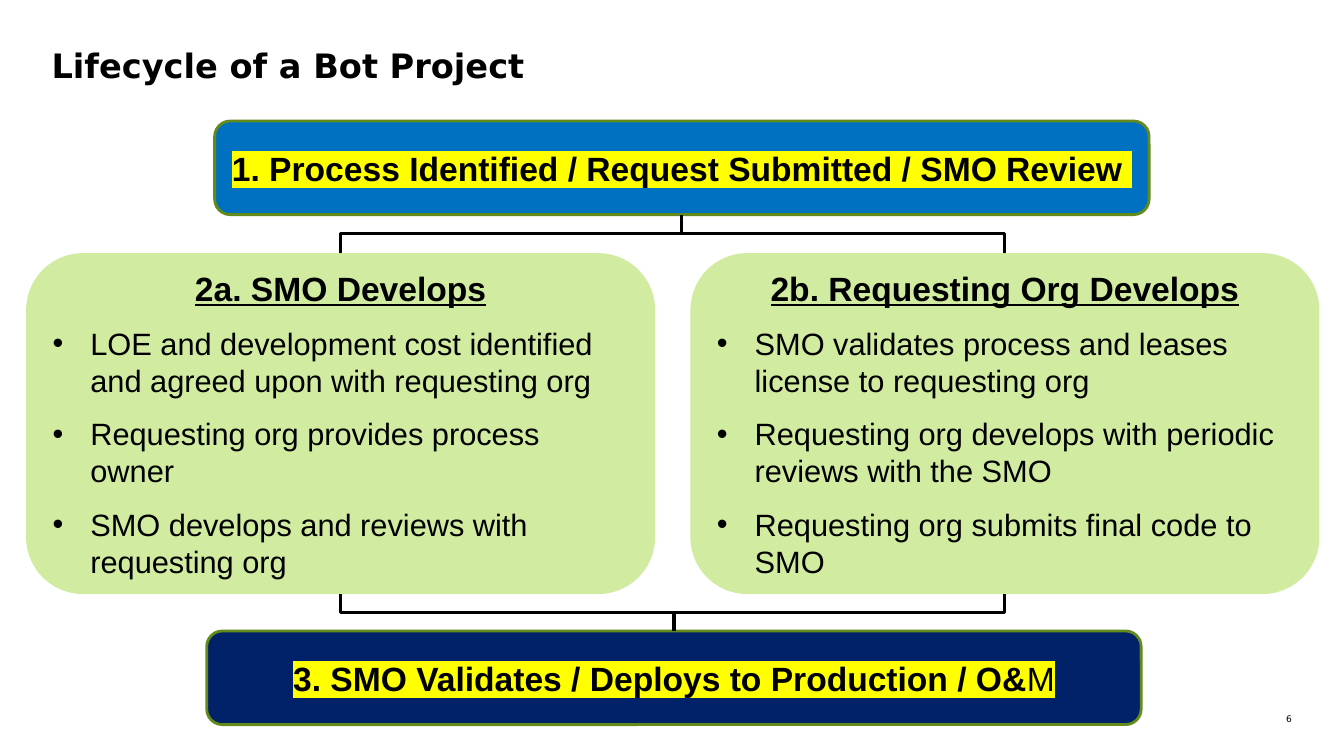
from lxml.etree import SubElement
from pptx import Presentation
from pptx.dml.color import RGBColor
from pptx.enum.shapes import MSO_CONNECTOR as Link, MSO_SHAPE as Shape
from pptx.enum.text import MSO_ANCHOR as Anchor, MSO_AUTO_SIZE as Fit, PP_ALIGN as Align
from pptx.oxml.ns import qn
from pptx.util import Cm, Pt

BLACK = RGBColor(0x00, 0x00, 0x00)
BLUE = RGBColor(0x00, 0x70, 0xC0)
NAVY = RGBColor(0x01, 0x21, 0x69)
GREEN = RGBColor(0x63, 0x8B, 0x1B)
LIME = RGBColor(0xD1, 0xEC, 0xA0)
YELLOW = RGBColor(0xFF, 0xFF, 0x00)
SANS, HEAD = "Arial", "DejaVu Sans"

CARDS = [
    (0.66, "2a. SMO Develops", [
        "LOE and development cost identified and agreed upon with requesting org",
        "Requesting org provides process owner",
        "SMO develops and reviews with requesting org"]),
    (17.4, "2b. Requesting Org Develops", [
        "SMO validates process and leases license to requesting org",
        "Requesting org develops with periodic reviews with the SMO",
        "Requesting org submits final code to SMO"]),
]


def style(run, size, face=SANS, bold=False, under=False):
    font = run.font
    font.size, font.name, font.bold, font.underline = Pt(size), face, bold, under
    font.color.rgb = BLACK


def mark(run):
    """Highlight a run in yellow."""
    props = run.font._element
    light = SubElement(props, qn("a:highlight"))
    SubElement(light, qn("a:srgbClr"), val=str(YELLOW))
    props.find(qn("a:solidFill")).addnext(light)


def add_box(slide, left, top, width, height, fill):
    box = slide.shapes.add_shape(
        Shape.ROUNDED_RECTANGLE, Cm(left), Cm(top), Cm(width), Cm(height))
    box.shadow.inherit = False
    box.fill.solid()
    box.fill.fore_color.rgb = fill
    box.line.fill.background()
    box.text_frame.word_wrap = True
    box.text_frame.vertical_anchor = Anchor.MIDDLE
    return box


def add_step(slide, left, top, fill, parts):
    box = add_box(slide, left, top, 23.55, 2.36, fill)
    box.line.color.rgb = GREEN
    box.line.width = Pt(2)
    para = box.text_frame.paragraphs[0]
    para.alignment = Align.CENTER
    for text, bold in parts:
        run = para.add_run()
        run.text = text
        style(run, 24, bold=bold)
        mark(run)
    return box


def add_card(slide, left, head, items):
    box = add_box(slide, left, 6.38, 15.85, 8.59, LIME)
    frame = box.text_frame
    frame.text = "\n".join([head, *items])
    for para in frame.paragraphs:
        para.space_after = Pt(12)
    first, *rest = frame.paragraphs
    first.alignment = Align.CENTER
    style(first.runs[0], 24, bold=True, under=True)
    for para in rest:
        para.alignment = Align.LEFT
        props = para._p.get_or_add_pPr()
        props.set("marL", str(Cm(0.95)))
        props.set("indent", str(-Cm(0.95)))
        SubElement(props, qn("a:buFont"), typeface=SANS)
        SubElement(props, qn("a:buChar"), char="•")
        style(para.runs[0], 22)
    return box


def add_link(slide, start, end):
    """Join the bottom of start to the top of end, leaving downwards."""
    link = slide.shapes.add_connector(Link.ELBOW, 0, 0, 0, 0)
    link.begin_connect(start, 2)
    link.end_connect(end, 0)
    link.line.color.rgb = BLACK
    link.line.width = Pt(2.25)
    props = link._element.spPr
    SubElement(props, qn("a:effectLst"))
    # A quarter turn makes the elbow run down, across, down
    x1, y1, x2, y2 = link.begin_x, link.begin_y, link.end_x, link.end_y
    wide, high = abs(x2 - x1), y2 - y1
    link.left, link.top = (x1 + x2 - high) // 2, (y1 + y2 - wide) // 2
    link.width, link.height = high, wide
    right = x2 > x1
    form = props.find(qn("a:xfrm"))
    form.set("rot", str((270 if right else 90) * 60000))
    form.set("flipH", "1" if right else "0")


def clear(frame):
    frame.margin_left = frame.margin_right = 0
    frame.margin_top = frame.margin_bottom = 0
    frame.word_wrap = True
    frame.auto_size = Fit.NONE
    frame.vertical_anchor = Anchor.TOP


def add_title(slide, text):
    title = slide.shapes.title
    title.left, title.top = Cm(1.3), Cm(1.12)
    title.width, title.height = Cm(31.27), Cm(1.93)
    clear(title.text_frame)
    title.text_frame.text = text
    para = title.text_frame.paragraphs[0]
    para.alignment = Align.LEFT
    style(para.runs[0], 24, HEAD, bold=True)


def add_page(slide, text):
    box = slide.shapes.add_textbox(Cm(31.7), Cm(17.98), Cm(0.86), Cm(0.28))
    clear(box.text_frame)
    box.text_frame.text = text
    para = box.text_frame.paragraphs[0]
    para.alignment = Align.RIGHT
    style(para.runs[0], 6.5, HEAD)


def main():
    deck = Presentation()
    deck.slide_width, deck.slide_height = Cm(33.87), Cm(19.05)
    slide = deck.slides.add_slide(deck.slide_layouts[5])

    # Title and page number
    add_title(slide, "Lifecycle of a Bot Project")
    add_page(slide, "6")

    # Steps and the two paths between them
    first = add_step(slide, 5.41, 3.05, BLUE, [
        ("1. Process Identified / Request Submitted / SMO Review ", True)])
    cards = [add_card(slide, *card) for card in CARDS]
    last = add_step(slide, 5.21, 15.9, NAVY, [
        ("3. SMO Validates / Deploys to Production / O&", True), ("M", False)])

    # Connectors
    for card in cards:
        add_link(slide, first, card)
        add_link(slide, card, last)

    deck.save("out.pptx")


if __name__ == "__main__":
    main()
